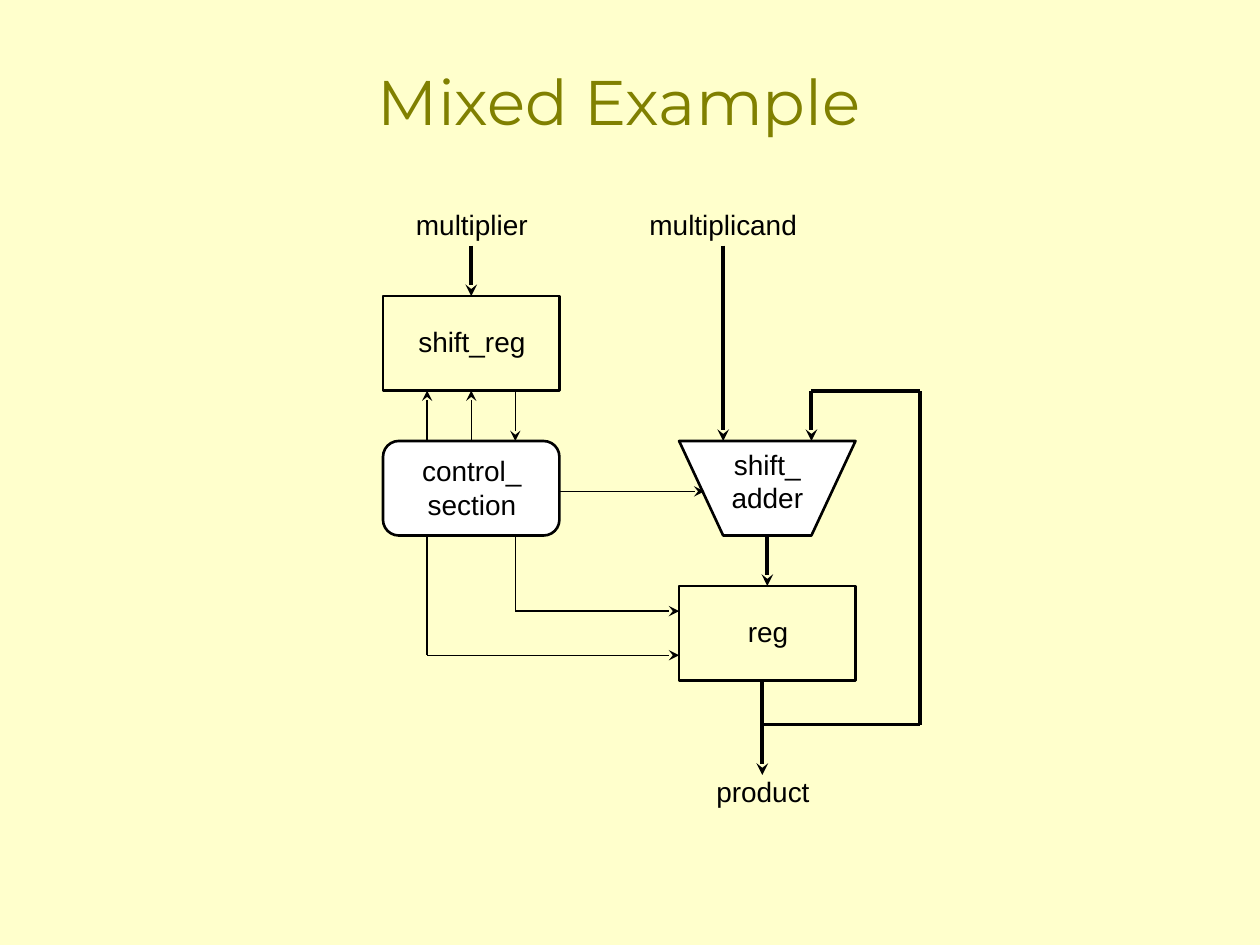
from dataclasses import dataclass

from lxml import etree
from pptx import Presentation
from pptx.dml.color import RGBColor
from pptx.enum.shapes import MSO_CONNECTOR, MSO_SHAPE
from pptx.enum.text import MSO_ANCHOR, PP_ALIGN
from pptx.oxml.ns import qn
from pptx.shapes.base import BaseShape
from pptx.slide import Slide
from pptx.text.text import TextFrame
from pptx.util import Inches, Pt

RECTANGLE = MSO_SHAPE.RECTANGLE
ROUNDED = MSO_SHAPE.ROUNDED_RECTANGLE
STRAIGHT = MSO_CONNECTOR.STRAIGHT
CENTER = PP_ALIGN.CENTER
MIDDLE = MSO_ANCHOR.MIDDLE
TOP_SITE, BOTTOM_SITE = 0, 2
TITLE_ONLY_LAYOUT = 5


@dataclass(frozen=True)
class Theme:
    background: RGBColor = RGBColor(0xFF, 0xFF, 0xCC)
    title: RGBColor = RGBColor(0x80, 0x80, 0x00)
    ink: RGBColor = RGBColor(0, 0, 0)
    paper: RGBColor = RGBColor(0xFF, 0xFF, 0xFF)
    title_font: str = "Montserrat"
    label_font: str = "Arial"
    title_size: float = 36
    label_size: float = 16
    outline: float = 1.5
    data_line: float = 2.25
    control_line: float = 0.75


@dataclass(frozen=True)
class Label:
    text: str
    left: float
    top: float
    width: float
    height: float = 0.3


@dataclass(frozen=True)
class Block:
    left: float
    top: float
    preset: MSO_SHAPE = RECTANGLE
    filled: bool = False


@dataclass(frozen=True)
class Wire:
    start: tuple[float, float]
    end: tuple[float, float]
    weight: float
    arrow: bool = True
    source: tuple[str, int] | None = None
    target: tuple[str, int] | None = None


THEME = Theme()
DATA, CONTROL = THEME.data_line, THEME.control_line
BLOCK_WIDTH, BLOCK_HEIGHT = 1.4, 0.75
LEFT_COLUMN, RIGHT_COLUMN = 3.04, 5.39
SHIFT_TOP, CONTROL_TOP, REG_TOP = 2.35, 3.5, 4.65
SHIFT_BOTTOM, CONTROL_BOTTOM, REG_BOTTOM = (
    top + BLOCK_HEIGHT for top in (SHIFT_TOP, CONTROL_TOP, REG_TOP)
)
PORT_GAP = BLOCK_WIDTH / 4
LEFT_PORTS = [LEFT_COLUMN + PORT_GAP * step for step in (1, 2, 3)]
RIGHT_PORTS = [RIGHT_COLUMN + PORT_GAP * step for step in (1, 2, 3)]
INPUT_TOP, PRODUCT_TOP = 1.95, 6.15
PRODUCT_X, FEEDBACK_X, FEEDBACK_Y = 6.05, 7.3, 5.75

BLOCKS = {
    "shift_reg": Block(LEFT_COLUMN, SHIFT_TOP),
    "control": Block(LEFT_COLUMN, CONTROL_TOP, ROUNDED, True),
    "reg": Block(RIGHT_COLUMN, REG_TOP),
}

LABELS = [
    Label("multiplier", 3.24, 1.65, 1.01),
    Label("multiplicand", 5.14, 1.65, 1.2),
    Label("shift_reg", 3.19, 2.58, 1.11),
    Label("control_\nsection", 3.19, 3.6, 1.11, 0.6),
    Label("shift_\nadder", 5.73, 3.55, 0.72, 0.6),
    Label("reg", 5.54, 4.88, 1.11),
    Label("product", 5.55, PRODUCT_TOP, 1.01),
]

FEEDBACK = [
    (PRODUCT_X, FEEDBACK_Y),
    (FEEDBACK_X, FEEDBACK_Y),
    (FEEDBACK_X, SHIFT_BOTTOM),
    (RIGHT_PORTS[2], SHIFT_BOTTOM),
    (RIGHT_PORTS[2], CONTROL_TOP),
]


def route(points: list[tuple[float, float]], weight: float) -> list[Wire]:
    last = len(points) - 2
    return [
        Wire(start, end, weight, index == last)
        for index, (start, end) in enumerate(zip(points, points[1:]))
    ]


def control_route(x: float, y: float) -> list[Wire]:
    return route([(x, CONTROL_BOTTOM), (x, y), (RIGHT_COLUMN, y)], CONTROL)


WIRES = [
    Wire((LEFT_PORTS[1], INPUT_TOP), (LEFT_PORTS[1], SHIFT_TOP), DATA,
         target=("shift_reg", TOP_SITE)),
    Wire((RIGHT_PORTS[0], INPUT_TOP), (RIGHT_PORTS[0], CONTROL_TOP), DATA),
    Wire((RIGHT_PORTS[1], CONTROL_BOTTOM), (RIGHT_PORTS[1], REG_TOP), DATA,
         target=("reg", TOP_SITE)),
    Wire((PRODUCT_X, REG_BOTTOM), (PRODUCT_X, PRODUCT_TOP), DATA),
    *route(FEEDBACK, DATA),
    Wire((LEFT_PORTS[0], CONTROL_TOP), (LEFT_PORTS[0], SHIFT_BOTTOM), CONTROL),
    Wire((LEFT_PORTS[1], CONTROL_TOP), (LEFT_PORTS[1], SHIFT_BOTTOM), CONTROL,
         source=("control", TOP_SITE), target=("shift_reg", BOTTOM_SITE)),
    Wire((LEFT_PORTS[2], SHIFT_BOTTOM), (LEFT_PORTS[2], CONTROL_TOP), CONTROL),
    Wire((LEFT_COLUMN + BLOCK_WIDTH, 3.9), (5.59, 3.9), CONTROL),
    *control_route(LEFT_PORTS[2], 4.85),
    *control_route(LEFT_PORTS[0], 5.2),
]


def style_text(frame: TextFrame, font: str, size: float, color: RGBColor) -> None:
    for paragraph in frame.paragraphs:
        paragraph.alignment = CENTER
        for run in paragraph.runs:
            run.font.name = font
            run.font.size = Pt(size)
            run.font.color.rgb = color


def style_block(shape: BaseShape, filled: bool) -> None:
    shape.shadow.inherit = False
    if filled:
        shape.fill.solid()
        shape.fill.fore_color.rgb = THEME.paper
    else:
        shape.fill.background()
    shape.line.color.rgb = THEME.ink
    shape.line.width = Pt(THEME.outline)


def draw_title(slide: Slide, text: str) -> None:
    title = slide.shapes.title
    title.left, title.top = Inches(0.58), Inches(0.17)
    title.width, title.height = Inches(8.67), Inches(1.25)
    title.text_frame.text = text
    title.text_frame.vertical_anchor = MIDDLE
    style_text(title.text_frame, THEME.title_font, THEME.title_size, THEME.title)


def draw_block(slide: Slide, block: Block) -> BaseShape:
    shape = slide.shapes.add_shape(
        block.preset, Inches(block.left), Inches(block.top),
        Inches(BLOCK_WIDTH), Inches(BLOCK_HEIGHT))
    style_block(shape, block.filled)
    return shape


def draw_adder(slide: Slide) -> None:
    corners = [
        (RIGHT_PORTS[0], CONTROL_BOTTOM),
        (RIGHT_PORTS[2], CONTROL_BOTTOM),
        (RIGHT_COLUMN + BLOCK_WIDTH, CONTROL_TOP),
    ]
    outline = slide.shapes.build_freeform(Inches(RIGHT_COLUMN), Inches(CONTROL_TOP))
    outline.add_line_segments([(Inches(x), Inches(y)) for x, y in corners])
    style_block(outline.convert_to_shape(), True)


def draw_label(slide: Slide, label: Label) -> None:
    frame = slide.shapes.add_textbox(
        Inches(label.left), Inches(label.top),
        Inches(label.width), Inches(label.height)).text_frame
    frame.margin_left = frame.margin_right = frame.margin_top = frame.margin_bottom = 0
    frame.word_wrap = True
    frame.text = label.text
    style_text(frame, THEME.label_font, THEME.label_size, THEME.ink)


def draw_wire(slide: Slide, wire: Wire, blocks: dict[str, BaseShape]) -> None:
    connector = slide.shapes.add_connector(
        STRAIGHT, *(Inches(value) for value in wire.start + wire.end))
    if wire.source:
        connector.begin_connect(blocks[wire.source[0]], wire.source[1])
    if wire.target:
        connector.end_connect(blocks[wire.target[0]], wire.target[1])
    connector.line.color.rgb = THEME.ink
    connector.line.width = Pt(wire.weight)
    if wire.arrow:
        etree.SubElement(connector.line._get_or_add_ln(), qn("a:tailEnd"), type="stealth")
    etree.SubElement(connector._element.spPr, qn("a:effectLst"))


def main() -> None:
    presentation = Presentation()
    presentation.slide_width, presentation.slide_height = Inches(10), Inches(7.5)
    slide = presentation.slides.add_slide(presentation.slide_layouts[TITLE_ONLY_LAYOUT])
    slide.background.fill.solid()
    slide.background.fill.fore_color.rgb = THEME.background
    draw_title(slide, "Mixed Example")
    blocks = {name: draw_block(slide, block) for name, block in BLOCKS.items()}
    draw_adder(slide)
    for wire in WIRES:
        draw_wire(slide, wire, blocks)
    for label in LABELS:
        draw_label(slide, label)
    presentation.save("out.pptx")


if __name__ == "__main__":
    main()
